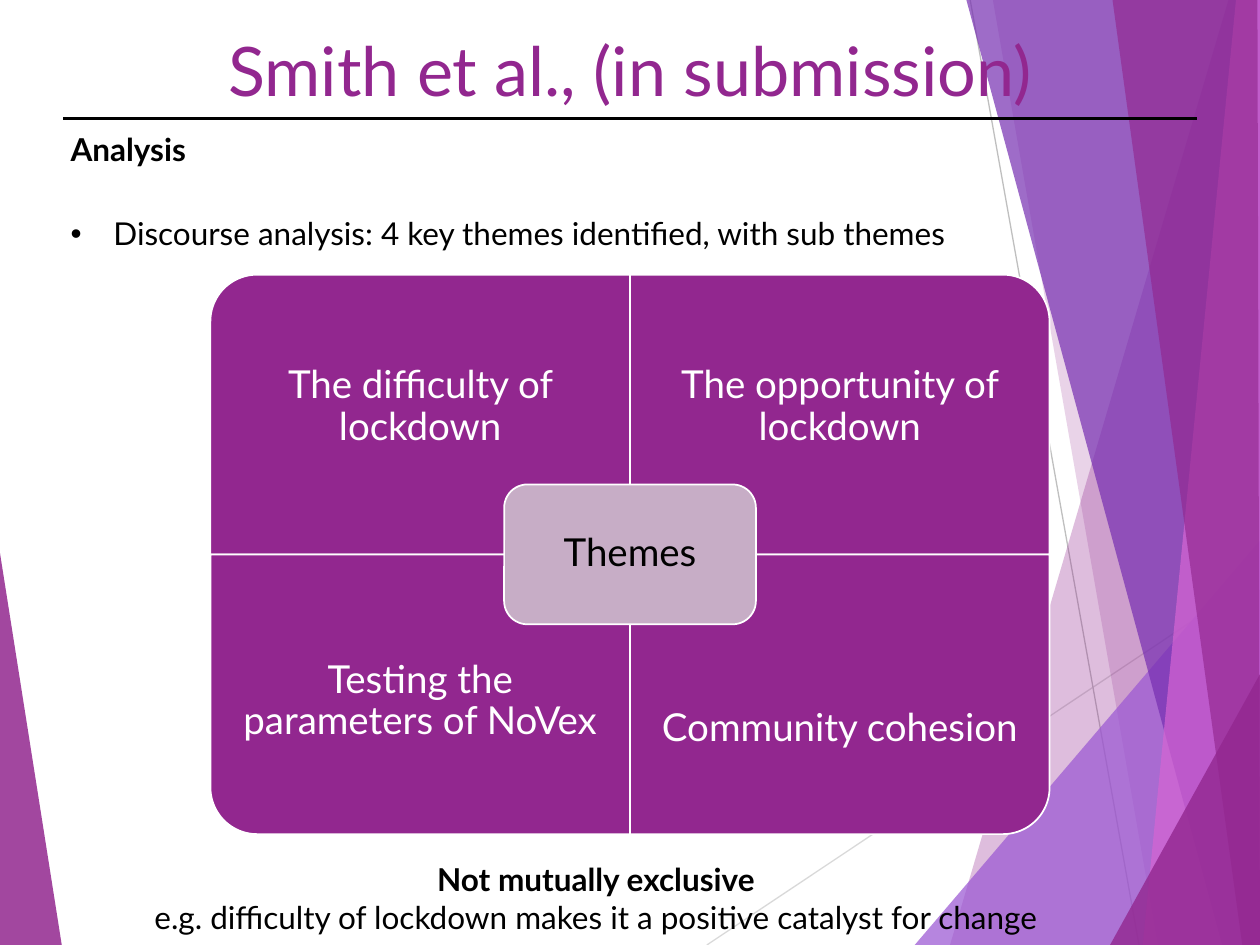
from pptx import Presentation
from pptx.dml.color import RGBColor
from pptx.enum.shapes import MSO_CONNECTOR, MSO_SHAPE
from pptx.enum.text import MSO_ANCHOR, MSO_AUTO_SIZE, PP_ALIGN
from pptx.oxml.ns import qn
from pptx.util import Inches, Pt
from lxml.etree import SubElement

PURPLE, BLACK, WHITE = "92278F", "000000", "FFFFFF"


def set_colour(color_format, hex_colour):
    """Apply a hex string to a font, fill or line colour."""
    color_format.rgb = RGBColor.from_string(hex_colour)


def set_formats(target, formats):
    """Set every attribute named in a dict of format values."""
    for attribute, value in formats.items():
        setattr(target, attribute, value)


def inches(box):
    """Turn a tuple of numbers into lengths."""
    return [Inches(length) for length in box]


def write(paragraph, text, size, colour, bold=False, **formats):
    """Fill a paragraph with one formatted run."""
    set_formats(paragraph, formats)
    run = paragraph.add_run()
    run.text = text
    set_formats(run.font, {"name": "Lato", "size": Pt(size), "bold": bold})
    set_colour(run.font.color, colour)


def prepare_frame(frame, inset, anchor):
    """Set wrapping, insets and anchor of a text frame."""
    set_formats(frame, {"word_wrap": True, "auto_size": MSO_AUTO_SIZE.NONE,
                        "vertical_anchor": anchor})
    for side in ("left", "right", "top", "bottom"):
        setattr(frame, f"margin_{side}", Inches(inset))


def place(placeholder, box):
    """Move a placeholder to a box, in front of what is drawn so far."""
    set_formats(placeholder, dict(zip(("left", "top", "width", "height"), inches(box))))
    placeholder.element.getparent().append(placeholder.element)


def add_rule(slide, start, end, colour, width):
    """Draw a straight line without a shadow."""
    rule = slide.shapes.add_connector(MSO_CONNECTOR.STRAIGHT, *inches(start + end))
    set_colour(rule.line.color, colour)
    rule.line.width = Pt(width)
    SubElement(rule.element.spPr, qn("a:effectLst"))


def add_facet(slide, points, colour, opacity):
    """Draw one translucent polygon."""
    corners = [inches(point) for point in points]
    builder = slide.shapes.build_freeform(*corners[0])
    builder.add_line_segments(corners[1:], close=True)
    facet = builder.convert_to_shape()
    facet.shadow.inherit = False
    facet.fill.solid()
    set_colour(facet.fill.fore_color, colour)
    facet.line.fill.background()
    rgb = facet.element.spPr.find(qn("a:solidFill")).find(qn("a:srgbClr"))
    SubElement(rgb, qn("a:alpha")).set("val", str(opacity * 1000))


def add_backdrop(slide, box):
    """Draw the faceted edges of the slide within the box."""
    left, top, width, height = box
    right, bottom = left + width, top + height
    corner = (right, bottom)
    add_rule(slide, (5.61, bottom), (right, 4.57), "D9D9D9", 0.75)
    add_rule(slide, (7.7, top), (9.04, bottom), "BFBFBF", 0.75)
    facets = [
        ([(left, 4.39), (0.49, bottom), (left, bottom)], PURPLE, 85),
        ([(9.75, top), (7.54, bottom), corner, (right, top)], PURPLE, 30),
        ([(7.88, top), (9.19, bottom), corner, (right, top)], PURPLE, 20),
        ([(7.26, bottom), (right, 4.29), corner], "9B57D3", 72),
        ([(7.67, top), (9.7, bottom), corner, (right, top)], "762EB1", 70),
        ([(9.81, top), (9.07, bottom), corner, (right, top)], "D665D3", 70),
        ([(8.83, top), (9.86, bottom), corner, (9.98, top)], PURPLE, 65),
        ([(8.81, bottom), (right, 5.35), corner], PURPLE, 80),
    ]
    for points, colour, opacity in facets:
        add_facet(slide, points, colour, opacity)


def add_heading(slide, box):
    """Place the title and the rule that crosses its lower part."""
    left, top, width, height = box
    add_rule(slide, (left, 0.94), (left + width, 0.94), BLACK, 2)
    title = slide.shapes.title
    place(title, box)
    prepare_frame(title.text_frame, 0, MSO_ANCHOR.MIDDLE)
    write(title.text_frame.paragraphs[0], "Smith et al., (in submission)", 39, PURPLE,
          alignment=PP_ALIGN.CENTER)


def add_analysis(slide, box):
    """Place the subheading and its bullet in the body placeholder."""
    body = slide.placeholders[1]
    place(body, box)
    frame = body.text_frame
    prepare_frame(frame, 0.05, MSO_ANCHOR.TOP)
    frame.margin_left = frame.margin_right = Inches(0.1)
    rows = [("Analysis", True, 0, None, 0),
            ("Discourse analysis: 4 key themes identified, with sub themes",
             False, 0.34, "•", 24)]
    for index, (text, bold, indent, bullet, gap) in enumerate(rows):
        paragraph = frame.add_paragraph() if index else frame.paragraphs[0]
        properties = paragraph._p.get_or_add_pPr()
        properties.set("marL", str(Inches(indent)))
        properties.set("indent", str(-Inches(indent)))
        if bullet:
            SubElement(properties, qn("a:buChar")).set("char", bullet)
        else:
            SubElement(properties, qn("a:buNone"))
        write(paragraph, text, 18, BLACK, bold, alignment=PP_ALIGN.LEFT,
              line_spacing=Pt(24), space_before=Pt(gap))


def add_panel(slide, preset, box, fill, rotation=0):
    """Draw a white-edged panel that covers the box after its rotation."""
    left, top, width, height = box
    if rotation % 180:
        left, top = left + (width - height) / 2, top + (height - width) / 2
        width, height = height, width
    panel = slide.shapes.add_shape(preset, *inches((left, top, width, height)))
    panel.rotation = rotation
    panel.shadow.inherit = False
    panel.fill.solid()
    set_colour(panel.fill.fore_color, fill)
    set_colour(panel.line.color, WHITE)
    panel.line.width = Pt(1)
    return panel


def add_themes(slide, box):
    """Draw the matrix of four themes around its central label."""
    left, top, width, height = box
    tile_width, tile_height = width / 2, height / 2
    label_height = tile_height * 0.75
    themes = [("The difficulty of lockdown", 0, 0, 270, 0.22),
              ("The opportunity of lockdown", 1, 0, 0, 0.22),
              ("Testing the parameters of NoVex", 0, 1, 180, -0.22),
              ("Community cohesion", 1, 1, 90, 0)]
    for theme, column, row, rotation, shift in themes:
        x, y = left + column * tile_width, top + row * tile_height
        add_panel(slide, MSO_SHAPE.ROUND_1_RECTANGLE,
                  (x, y, tile_width, tile_height), PURPLE, rotation)
        label_top = y + row * (tile_height - label_height) + shift
        label = slide.shapes.add_textbox(*inches((x, label_top, tile_width, label_height)))
        prepare_frame(label.text_frame, 0.17, MSO_ANCHOR.MIDDLE)
        write(label.text_frame.paragraphs[0], theme, 22, WHITE,
              alignment=PP_ALIGN.CENTER, line_spacing=0.9)
    hub_width, hub_height = tile_width * 0.6, tile_height / 2
    hub = add_panel(slide, MSO_SHAPE.ROUNDED_RECTANGLE,
                    (left + (width - hub_width) / 2, top + (height - hub_height) / 2,
                     hub_width, hub_height), "C7ADC6")
    prepare_frame(hub.text_frame, 0.09, MSO_ANCHOR.MIDDLE)
    write(hub.text_frame.paragraphs[0], "Themes", 22, BLACK,
          alignment=PP_ALIGN.CENTER, line_spacing=0.9)


def add_conclusion(slide, box):
    """Place the two closing lines."""
    frame = slide.shapes.add_textbox(*inches(box)).text_frame
    prepare_frame(frame, 0.05, MSO_ANCHOR.TOP)
    write(frame.paragraphs[0], "Not mutually exclusive", 18, BLACK, True,
          alignment=PP_ALIGN.CENTER)
    write(frame.add_paragraph(),
          "e.g. difficulty of lockdown makes it a positive catalyst for change",
          18, BLACK, alignment=PP_ALIGN.CENTER)


def main():
    """Build and save the slide."""
    deck = Presentation()
    set_formats(deck, {"slide_width": Inches(10), "slide_height": Inches(7.5)})
    slide = deck.slides.add_slide(deck.slide_layouts[1])
    add_backdrop(slide, (0, 0, 10, 7.5))
    add_heading(slide, (0.5, -0.22, 9, 1.54))
    add_analysis(slide, (0.46, 0.95, 9.54, 1.32))
    add_themes(slide, (1.67, 2.18, 6.66, 4.44))
    add_conclusion(slide, (0.45, 6.78, 8.56, 0.71))
    deck.save("out.pptx")


if __name__ == "__main__":
    main()
